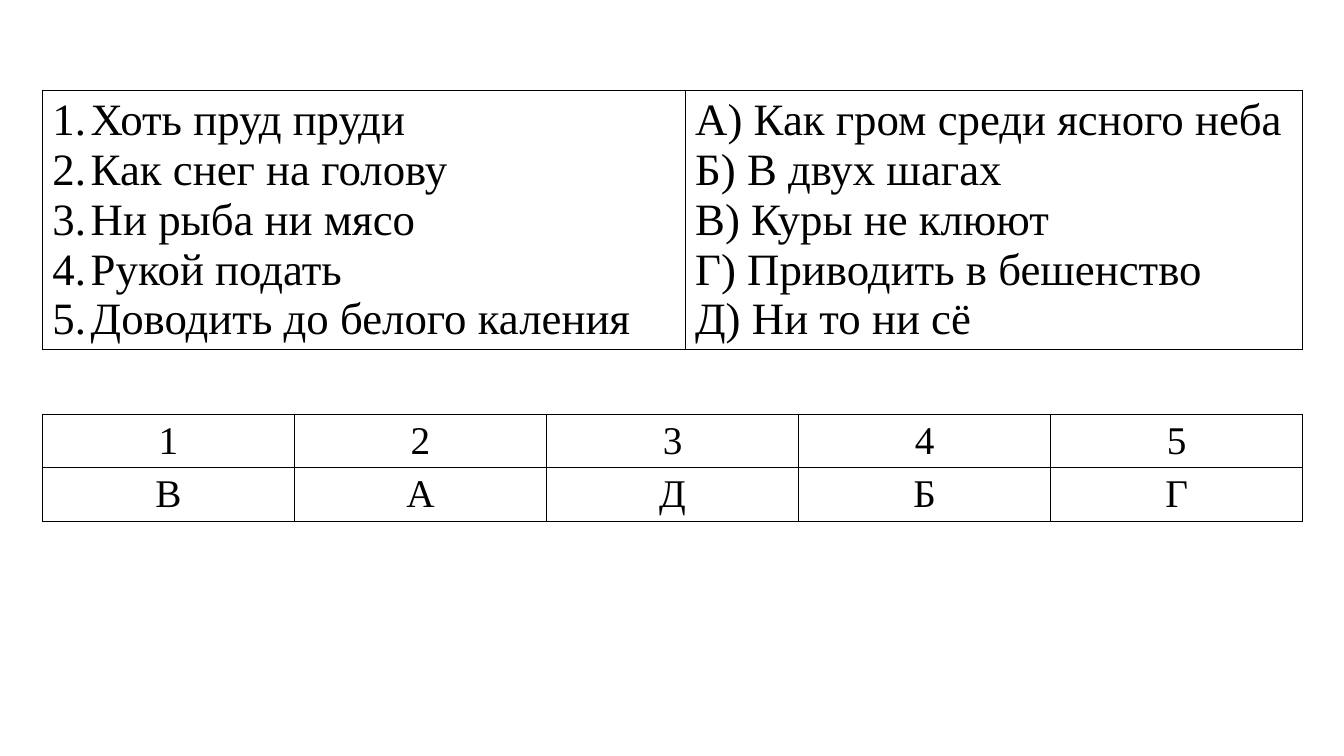
from lxml.etree import SubElement
from pptx import Presentation
from pptx.dml.color import RGBColor
from pptx.enum.text import PP_ALIGN
from pptx.oxml.ns import qn
from pptx.util import Inches, Pt

IDIOMS = [
    "Хоть пруд пруди",
    "Как снег на голову",
    "Ни рыба ни мясо",
    "Рукой подать",
    "Доводить до белого каления",
]
MEANINGS = [
    "А) Как гром среди ясного неба",
    "Б) В двух шагах",
    "В) Куры не клюют",
    "Г) Приводить в бешенство",
    "Д) Ни то ни сё",
]
ANSWERS = {"1": "В", "2": "А", "3": "Д", "4": "Б", "5": "Г"}

COLORS = {"ink": "000000", "paper": "FFFFFF"}
FONT = "Times New Roman"
LEFT, TABLE_WIDTH = 0.42, 12.5
IDIOM_SHARE = 0.51
NUMBER_INDENT = Inches(0.38)


def add_borders(cell):
    properties = cell._tc.get_or_add_tcPr()
    for side in ("lnL", "lnR", "lnT", "lnB"):
        line = SubElement(properties, qn(f"a:{side}"), w=str(Pt(1)))
        fill = SubElement(line, qn("a:solidFill"))
        SubElement(fill, qn("a:srgbClr"), val=COLORS["ink"])


def number_paragraph(paragraph):
    properties = paragraph._p.get_or_add_pPr()
    properties.set("marL", str(NUMBER_INDENT))
    properties.set("indent", str(-NUMBER_INDENT))
    SubElement(properties, qn("a:buFont"), typeface="+mj-lt")
    SubElement(properties, qn("a:buAutoNum"), type="arabicPeriod")


def fill_cell(cell, lines, size, alignment, numbered):
    add_borders(cell)
    cell.fill.solid()
    cell.fill.fore_color.rgb = RGBColor.from_string(COLORS["paper"])
    cell.text_frame.text = "\n".join(lines)
    for paragraph in cell.text_frame.paragraphs:
        if numbered:
            number_paragraph(paragraph)
        paragraph.alignment = alignment
        for run in paragraph.runs:
            run.font.name = FONT
            run.font.size = Pt(size)
            run.font.bold = False
            run.font.color.rgb = RGBColor.from_string(COLORS["ink"])


def add_grid(slide, rows, top, row_height, shares, size, alignment, numbered_column=None):
    """Add a bordered table; each cell of rows is a list of lines."""
    frame = slide.shapes.add_table(
        len(rows), len(shares), Inches(LEFT), Inches(top),
        Inches(TABLE_WIDTH), Inches(row_height * len(rows)))
    table = frame.table
    table.first_row = table.horz_banding = False
    for column, share in zip(table.columns, shares):
        column.width = Inches(TABLE_WIDTH * share)
    for row_index, row in enumerate(rows):
        for column_index, lines in enumerate(row):
            fill_cell(table.cell(row_index, column_index), lines, size,
                      alignment, column_index == numbered_column)


presentation = Presentation()
presentation.slide_width = Inches(13.33)
presentation.slide_height = Inches(7.5)
slide = presentation.slides.add_slide(presentation.slide_layouts[6])

add_grid(slide, [[IDIOMS, MEANINGS]], 0.9, 2.56, [IDIOM_SHARE, 1 - IDIOM_SHARE],
         32, PP_ALIGN.LEFT, numbered_column=0)
answer_rows = [[[text] for text in row] for row in (ANSWERS.keys(), ANSWERS.values())]
add_grid(slide, answer_rows, 4.11, 0.53, [1 / len(ANSWERS)] * len(ANSWERS),
         28, PP_ALIGN.CENTER)

presentation.save("out.pptx")
